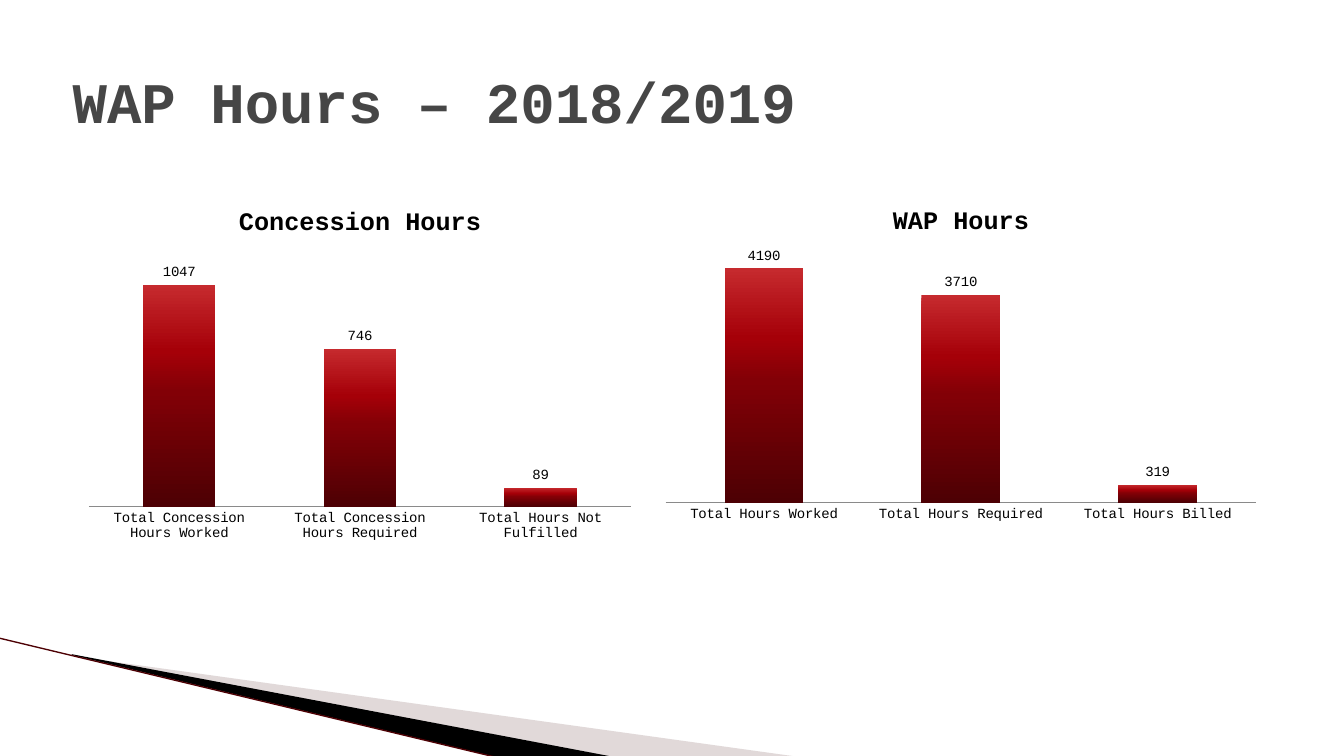
from copy import deepcopy

from lxml.etree import SubElement
from pptx import Presentation
from pptx.chart.data import CategoryChartData as Data
from pptx.dml.color import RGBColor
from pptx.enum.chart import XL_CHART_TYPE as Kind
from pptx.enum.chart import XL_LABEL_POSITION as Spot
from pptx.enum.chart import XL_TICK_MARK as Tick
from pptx.enum.shapes import MSO_CONNECTOR as Link
from pptx.enum.text import MSO_ANCHOR as Anchor
from pptx.enum.text import PP_ALIGN as Align
from pptx.oxml.ns import qn
from pptx.util import Pt

PX = 9144
FONT = "Courier New"
BLACK = RGBColor(0x00, 0x00, 0x00)
GRAY = RGBColor(0x46, 0x46, 0x46)
MAUVE = RGBColor(0xB4, 0xA0, 0xA1)
MAROON = RGBColor(0x4D, 0x00, 0x04)
AXIS = RGBColor(0x8A, 0x8A, 0x8A)
STOPS = [
    (0, RGBColor(0xC6, 0x2A, 0x2E)),
    (0.3, RGBColor(0xA5, 0x00, 0x08)),
    (0.48, RGBColor(0x82, 0x00, 0x06)),
    (1, MAROON),
]


def style(font, size, color, bold=False):
    font.name = FONT
    font.size = Pt(size)
    font.bold = bold
    font.color.rgb = color


def add_wedge(slide, points, color, alpha=100):
    pen = slide.shapes.build_freeform(*points[0], scale=PX)
    pen.add_line_segments(points[1:], close=True)
    wedge = pen.convert_to_shape()
    wedge.shadow.inherit = False
    wedge.fill.solid()
    wedge.fill.fore_color.rgb = color
    wedge.line.fill.background()
    if alpha < 100:
        tint = next(wedge._element.spPr.iter(qn("a:srgbClr")))
        SubElement(tint, qn("a:alpha"), val=str(alpha * 1000))


def add_line(slide, start, end, color):
    ends = [v * PX for v in (*start, *end)]
    line = slide.shapes.add_connector(Link.STRAIGHT, *ends)
    line.line.color.rgb = color
    line.line.width = Pt(0.95)
    SubElement(line._element.spPr, qn("a:effectLst"))


def set_title(slide, text, box):
    title = slide.shapes.title
    title.left, title.top, title.width, title.height = [v * PX for v in box]
    frame = title.text_frame
    frame.text = text
    frame.vertical_anchor = Anchor.MIDDLE
    para = frame.paragraphs[0]
    para.alignment = Align.LEFT
    style(para.font, 41, GRAY, True)


def shade(series):
    fill = series.format.fill
    fill.gradient()
    fill.gradient_angle = 270
    stops = next(series._element.iter(qn("a:gsLst")))
    while len(stops) < len(STOPS):
        stops.append(deepcopy(stops[0]))
    for stop, (place, color) in zip(fill.gradient_stops, STOPS):
        stop.position = place
        stop.color.rgb = color


def add_bars(slide, name, cats, vals, top, box):
    data = Data()
    data.categories = cats
    data.add_series("Series 1", vals)
    place = [v * PX for v in box]
    chart = slide.shapes.add_chart(Kind.COLUMN_CLUSTERED, *place, data).chart
    style(chart.font, 10, BLACK)
    chart.has_legend = False
    chart.has_title = True
    chart.chart_title.include_in_layout = False
    head = chart.chart_title.text_frame
    head.text = name
    style(head.paragraphs[0].font, 18, BLACK, True)

    axis = chart.category_axis
    axis.major_tick_mark = axis.minor_tick_mark = Tick.NONE
    axis.format.line.color.rgb = AXIS
    scale = chart.value_axis
    scale.visible = False
    scale.has_major_gridlines = False
    scale.minimum_scale = 0
    scale.maximum_scale = top

    plot = chart.plots[0]
    plot.vary_by_categories = False
    plot.gap_width = 150
    plot.overlap = -25
    plot.has_data_labels = True
    labels = plot.data_labels
    labels.show_value = True
    labels.position = Spot.OUTSIDE_END
    style(labels.font, 10, BLACK)
    shade(plot.series[0])


def main():
    deck = Presentation()
    deck.slide_width, deck.slide_height = 1333 * PX, 750 * PX
    slide = deck.slides.add_slide(deck.slide_layouts[5])
    add_wedge(slide, [(73, 651), (793, 751), (608, 751), (73, 650)], MAUVE, 40)
    add_wedge(slide, [(71, 649), (609, 751), (496, 752), (72, 650)], BLACK)
    add_line(slide, (-1, 633), (495, 752), MAROON)
    set_title(slide, "WAP Hours – 2018/2019", (62, 37, 1200, 125))
    add_bars(
        slide,
        "Concession Hours",
        ["Total Concession Hours Worked", "Total Concession Hours Required",
         "Total Hours Not Fulfilled"],
        [1047, 746, 89],
        1200,
        (77, 188, 560, 357),
    )
    add_bars(
        slide,
        "WAP Hours",
        ["Total Hours Worked", "Total Hours Required", "Total Hours Billed"],
        [4190, 3710, 319],
        4500,
        (648, 187, 610, 338),
    )
    deck.save("out.pptx")


if __name__ == "__main__":
    main()
